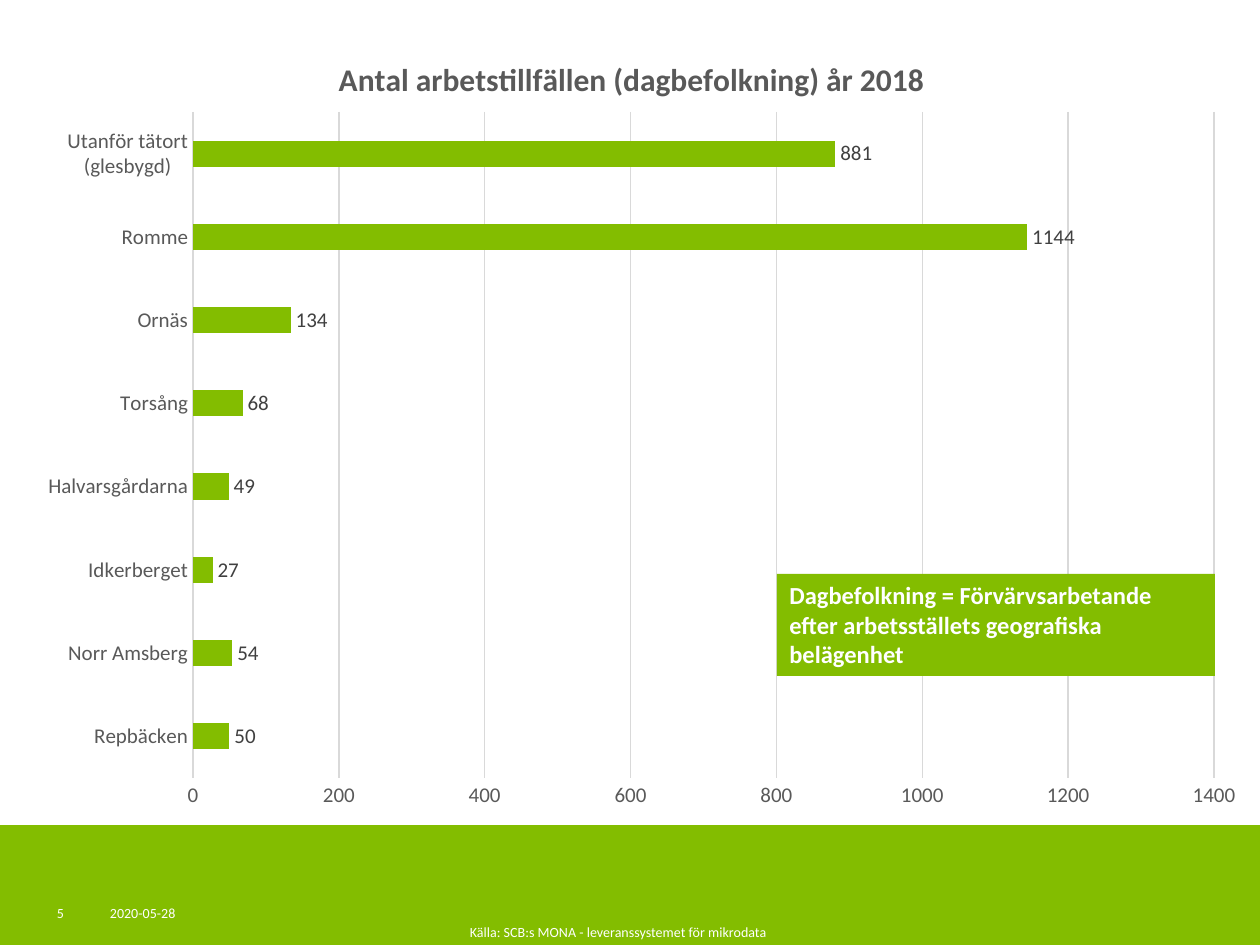
from lxml.etree import SubElement
from pptx import Presentation
from pptx.chart.data import CategoryChartData
from pptx.dml.color import RGBColor
from pptx.enum.chart import XL_CHART_TYPE, XL_LABEL_POSITION, XL_TICK_MARK
from pptx.enum.shapes import MSO_SHAPE
from pptx.enum.text import MSO_ANCHOR, PP_ALIGN
from pptx.oxml.ns import qn
from pptx.util import Pt

EMU_PER_PX = 914400 / 126
FONT = "Calibri"
GREEN = RGBColor(0x83, 0xBD, 0x00)
WHITE = RGBColor(0xFF, 0xFF, 0xFF)
BLACK = RGBColor(0, 0, 0)
GRID_GRAY = RGBColor(0xD9, 0xD9, 0xD9)
AXIS_GRAY = RGBColor(0x59, 0x59, 0x59)
LABEL_GRAY = RGBColor(0x40, 0x40, 0x40)

JOBS_BY_PLACE = {
    "Repbäcken": 50,
    "Norr Amsberg": 54,
    "Idkerberget": 27,
    "Halvarsgårdarna": 49,
    "Torsång": 68,
    "Ornäs": 134,
    "Romme": 1144,
    "Utanför tätort (glesbygd)": 881,
}


def px(*lengths):
    return [round(length * EMU_PER_PX) for length in lengths]


def format_font(font, size, color, bold=False):
    font.name = FONT
    font.size = Pt(size)
    font.bold = bold
    font.color.rgb = color


def set_text(frame, text, size=8, color=WHITE, bold=False,
             align=PP_ALIGN.LEFT, anchor=MSO_ANCHOR.TOP, inset=True):
    frame.word_wrap = True
    frame.vertical_anchor = anchor
    if not inset:
        frame.margin_left = frame.margin_right = 0
        frame.margin_top = frame.margin_bottom = 0
    paragraph = frame.paragraphs[0]
    paragraph.alignment = align
    run = paragraph.add_run()
    run.text = text
    format_font(run.font, size, color, bold)


def add_label(slide, box, text, **text_format):
    set_text(slide.shapes.add_textbox(*px(*box)).text_frame, text, **text_format)


def add_green_box(slide, box):
    rectangle = slide.shapes.add_shape(MSO_SHAPE.RECTANGLE, *px(*box))
    rectangle.shadow.inherit = False
    rectangle.fill.solid()
    rectangle.fill.fore_color.rgb = GREEN
    rectangle.line.fill.background()
    return rectangle


def place(parent, position, **fractions):
    """Give a chart part a manual layout, in fractions of the chart."""
    layout = parent.find(qn("c:layout"))
    if layout is None:
        layout = SubElement(parent, qn("c:layout"))
        parent.insert(position, layout)
    for child in list(layout):
        layout.remove(child)
    manual = SubElement(layout, qn("c:manualLayout"))
    settings = {"xMode": "edge", "yMode": "edge", **fractions}
    if "w" in fractions:
        settings = {"layoutTarget": "inner", **settings}
    for tag, value in settings.items():
        SubElement(manual, qn(f"c:{tag}")).set("val", str(value))


def format_axis(axis):
    axis.major_tick_mark = axis.minor_tick_mark = XL_TICK_MARK.NONE
    format_font(axis.tick_labels.font, 12, AXIS_GRAY)


def format_line(line):
    line.color.rgb = GRID_GRAY
    line.width = Pt(0.75)


def add_jobs_chart(slide, box):
    data = CategoryChartData()
    data.categories = list(JOBS_BY_PLACE)
    data.add_series("Series 1", list(JOBS_BY_PLACE.values()))
    chart = slide.shapes.add_chart(
        XL_CHART_TYPE.BAR_CLUSTERED, *px(*box), data).chart
    format_font(chart.font, 10, BLACK)
    chart.has_legend = False

    # Title
    chart.has_title = True
    title = chart.chart_title
    run = title.text_frame.paragraphs[0].add_run()
    run.text = "Antal arbetstillfällen (dagbefolkning) år 2018"
    format_font(run.font, 18, AXIS_GRAY, bold=True)
    place(title._element, 1, x=0.25, y=0.04)

    # Axes
    places, jobs = chart.category_axis, chart.value_axis
    for axis in (places, jobs):
        format_axis(axis)
    format_line(places.format.line)
    jobs.format.line.fill.background()
    jobs.minimum_scale, jobs.maximum_scale, jobs.major_unit = 0, 1400, 200
    jobs.has_major_gridlines = True
    format_line(jobs.major_gridlines.format.line)

    # Bars and their values
    plot = chart.plots[0]
    plot.gap_width = 219
    plot.vary_by_categories = False
    bars = plot.series[0]
    bars.format.fill.solid()
    bars.format.fill.fore_color.rgb = GREEN
    labels = bars.data_labels
    labels.show_value = True
    labels.position = XL_LABEL_POSITION.OUTSIDE_END
    format_font(labels.font, 12, LABEL_GRAY)

    # Plot edges in px on the slide
    chart_left, chart_top, chart_width, chart_height = box
    left, top, right, bottom = 193, 112, 1214, 778
    plot_area = chart.element.find(f".//{qn('c:plotArea')}")
    place(plot_area, 0,
          x=(left - chart_left) / chart_width,
          y=(top - chart_top) / chart_height,
          w=(right - left) / chart_width,
          h=(bottom - top) / chart_height)


def main():
    presentation = Presentation()
    presentation.slide_width, presentation.slide_height = px(1260, 945)
    slide = presentation.slides.add_slide(presentation.slide_layouts[6])

    # Footer band with date and page number
    add_green_box(slide, (0, 825, 1260, 120))
    add_label(slide, (110, 905, 89, 40), "2020-05-28", inset=False)
    add_label(slide, (57, 905, 39, 40), "5", inset=False)

    add_jobs_chart(slide, (24, 20, 1236, 804))

    # Definition and source
    definition = add_green_box(slide, (777, 574, 438, 102))
    set_text(definition.text_frame,
             "Dagbefolkning = Förvärvsarbetande efter arbetsställets "
             "geografiska belägenhet", size=14, bold=True)
    add_label(slide, (286, 887, 665, 59),
              "Källa: SCB:s MONA - leveranssystemet för mikrodata",
              align=PP_ALIGN.CENTER, anchor=MSO_ANCHOR.BOTTOM)

    presentation.save("out.pptx")


if __name__ == "__main__":
    main()
